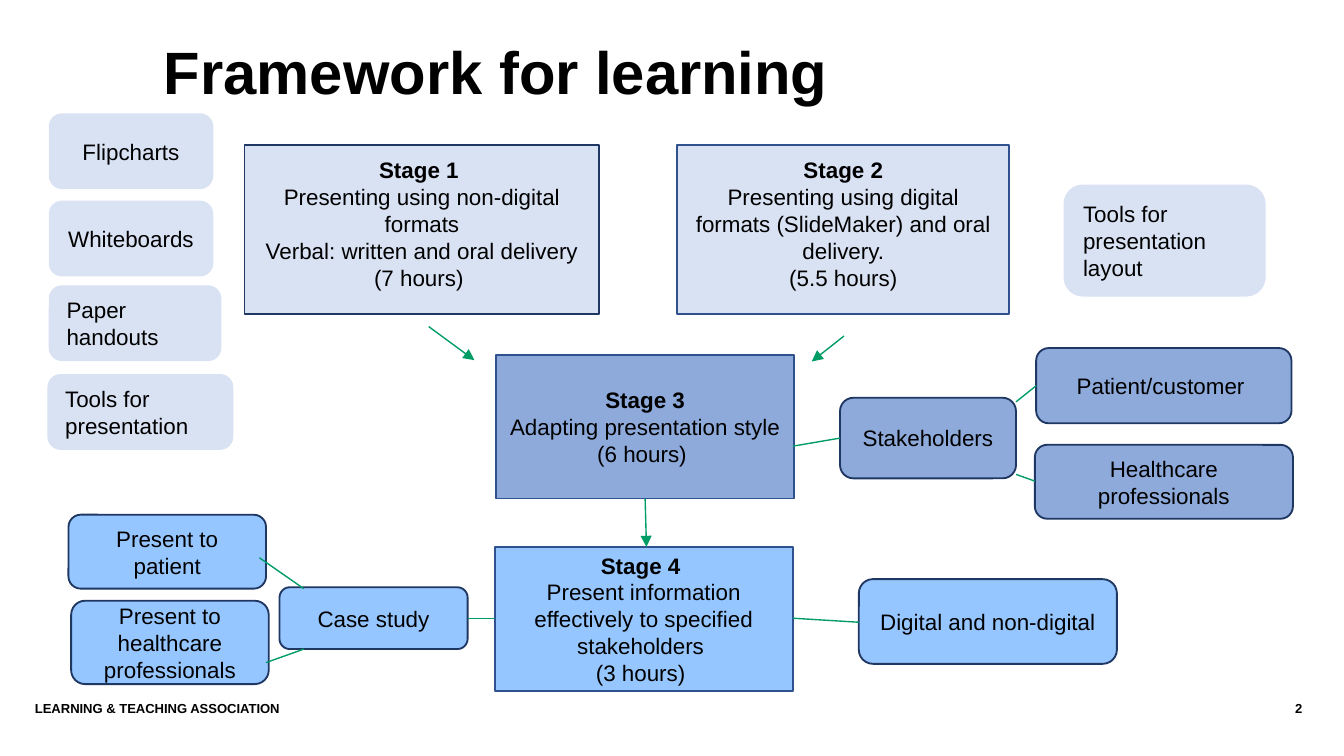
from lxml import etree
from pptx import Presentation
from pptx.dml.color import RGBColor
from pptx.enum import shapes, text
from pptx.oxml.ns import qn
from pptx.util import Inches, Pt

PALE, SOFT, MID, BRIGHT = "D9E2F3", "DAE3F3", "8EAADB", "96C6FF"
NAVY, BLUE, GREEN = "1F3763", "2F528F", "009C66"
LEFT, CENTER, RIGHT = text.PP_ALIGN.LEFT, text.PP_ALIGN.CENTER, text.PP_ALIGN.RIGHT
RECT, ROUND = shapes.MSO_SHAPE.RECTANGLE, shapes.MSO_SHAPE.ROUNDED_RECTANGLE


def color(code):
    return RGBColor.from_string(code)


def write(box, lines, size, align, bold_lines):
    """Fill a box with one paragraph per line, the first bold_lines in bold."""
    frame = box.text_frame
    frame.word_wrap = True
    frame.text = "\n".join(lines)
    for index, para in enumerate(frame.paragraphs):
        para.alignment = align
        for span in para.runs:
            span.font.name = "Arial"
            span.font.size = Pt(size)
            span.font.bold = index < bold_lines
            span.font.color.rgb = color("000000")


deck = Presentation()
deck.slide_width = Inches(10)
deck.slide_height = Inches(10 * 9 / 16)
page = deck.slides.add_slide(deck.slide_layouts[6])

# Title, footer and page number: place, insets (left/right, top), text, size, alignment
captions = [
    ((0.51, 0, 7.35, 0.84), (0.71, 0.26), "Framework for learning", 32, LEFT),
    ((0.26, 5.21, 8.41, 0.3), (0, 0), "LEARNING & TEACHING ASSOCIATION", 7, LEFT),
    ((8.7, 5.21, 0.99, 0.3), (0, 0), "2", 7, RIGHT),
]
for place, (side, top), words, size, align in captions:
    box = page.shapes.add_textbox(*map(Inches, place))
    frame = box.text_frame
    frame.margin_left = frame.margin_right = Inches(side)
    frame.margin_top = Inches(top)
    frame.margin_bottom = 0
    write(box, [words], size, align, 1)

# Stages: place, fill, outline, bottom inset, lines
stages = [
    ((1.82, 1.08, 2.64, 1.26), PALE, NAVY, 0.14,
     ["Stage 1 ", "Presenting using non-digital formats",
      "Verbal: written and oral delivery", "(7 hours) "]),
    ((5.04, 1.08, 2.47, 1.26), PALE, BLUE, 0.14,
     ["Stage 2", "Presenting using digital formats (SlideMaker) and oral delivery.",
      "(5.5 hours)"]),
    ((3.69, 2.64, 2.22, 1.07), MID, BLUE, 0.05,
     ["Stage 3", "Adapting presentation style ", "(6 hours) "]),
    ((3.68, 4.07, 2.22, 1.07), BRIGHT, BLUE, 0.05,
     ["Stage 4 ", "Present information effectively to specified stakeholders ",
      "(3 hours) "]),
]
# Labels around the stages: place, fill, outline, alignment, text
labels = [
    ((0.37, 0.85, 1.21, 0.55), PALE, PALE, CENTER, "Flipcharts"),
    ((0.37, 1.5, 1.21, 0.55), SOFT, SOFT, CENTER, "Whiteboards"),
    ((0.37, 2.13, 1.27, 0.55), PALE, PALE, LEFT, "Paper handouts"),
    ((0.36, 2.79, 1.37, 0.55), PALE, PALE, LEFT, "Tools for presentation"),
    ((7.92, 1.38, 1.49, 0.82), PALE, PALE, LEFT, "Tools for presentation layout"),
    ((6.25, 2.96, 1.31, 0.6), MID, NAVY, CENTER, "Stakeholders"),
    ((7.71, 2.59, 1.9, 0.56), MID, NAVY, CENTER, "Patient/customer "),
    ((7.7, 3.31, 1.92, 0.55), MID, NAVY, CENTER, "Healthcare professionals"),
    ((6.39, 4.31, 1.92, 0.63), BRIGHT, NAVY, CENTER, "Digital and non-digital"),
    ((2.08, 4.37, 1.4, 0.46), BRIGHT, NAVY, CENTER, "Case study"),
    ((0.51, 3.83, 1.47, 0.55), BRIGHT, NAVY, CENTER, "Present to patient"),
    ((0.53, 4.47, 1.47, 0.62), BRIGHT, NAVY, CENTER, "Present to healthcare professionals"),
]
boxes = [(RECT, place, fill, outline, bottom, lines, CENTER, 1)
         for place, fill, outline, bottom, lines in stages]
boxes += [(ROUND, place, fill, outline, 0.05, [words], align, 0)
          for place, fill, outline, align, words in labels]
for kind, place, fill, outline, bottom, lines, align, bold_lines in boxes:
    box = page.shapes.add_shape(kind, *map(Inches, place))
    box.shadow.inherit = False
    box.fill.solid()
    box.fill.fore_color.rgb = color(fill)
    box.line.color.rgb = color(outline)
    box.line.width = Pt(1)
    box.text_frame.vertical_anchor = text.MSO_ANCHOR.MIDDLE
    box.text_frame.margin_bottom = Inches(bottom)
    write(box, lines, 12, align, bold_lines)

# Links: start x, start y, end x, end y
arrows = [
    (3.19, 2.43, 3.53, 2.68),
    (6.28, 2.5, 6.04, 2.69),
    (4.8, 3.71, 4.81, 4.07),
]
plain_links = [
    (5.9, 4.6, 6.39, 4.63),
    (6.25, 3.26, 5.9, 3.32),
    (7.56, 2.99, 7.71, 2.87),
    (7.56, 3.53, 7.7, 3.58),
    (2.26, 4.38, 1.93, 4.15),
    (2.26, 4.83, 1.98, 4.93),
    (3.68, 4.6, 3.48, 4.6),
]
for ends in arrows + plain_links:
    link = page.shapes.add_connector(shapes.MSO_CONNECTOR.STRAIGHT, *map(Inches, ends))
    link.line.color.rgb = color(GREEN)
    link.line.width = Pt(0.75)
    properties = link.element.spPr
    if ends in arrows:
        etree.SubElement(properties.find(qn("a:ln")), qn("a:tailEnd"), type="triangle")
    etree.SubElement(properties, qn("a:effectLst"))

deck.save("out.pptx")
